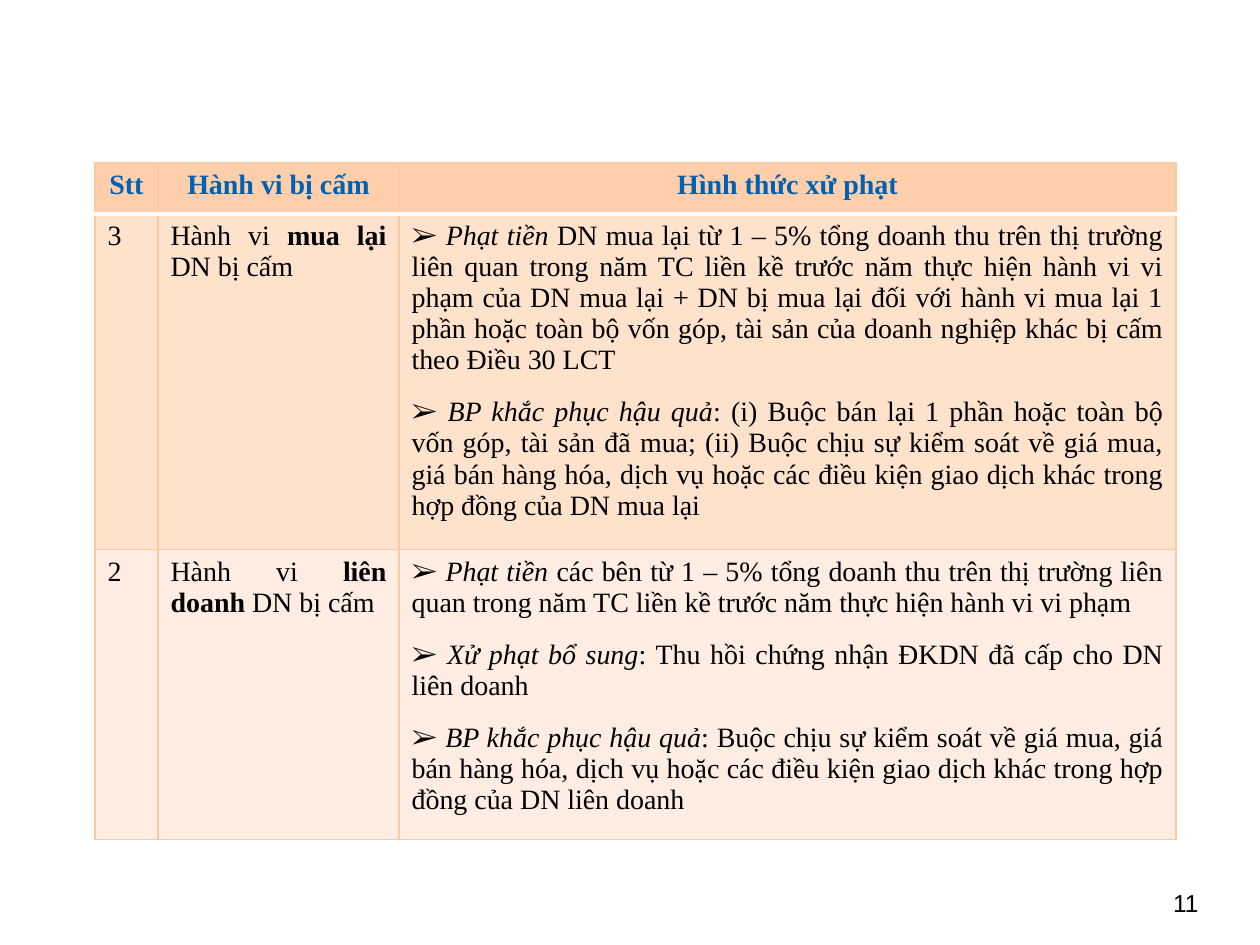
"""Builds a slide with a table of prohibited acts and their penalties."""
from dataclasses import dataclass

from lxml import etree
from pptx import Presentation
from pptx.dml.color import RGBColor
from pptx.enum import text
from pptx.oxml import ns
from pptx.util import Emu, Pt

EMU_PER_PX = 914400 / 126
SERIF = "Times New Roman"
BLACK, BLUE, WHITE, PEACH = "000000", "0061B2", "FFFFFF", "FACAA4"
ALIGN = text.PP_ALIGN
COLUMNS = [63, 241, 777]


@dataclass(frozen=True)
class Span:
    words: str
    bold: bool = False
    italic: bool = False
    color: str = BLACK


@dataclass(frozen=True)
class Para:
    spans: list[Span]
    align: ALIGN = ALIGN.JUSTIFY
    bulleted: bool = False


@dataclass(frozen=True)
class Row:
    height: int
    fill: str
    top: tuple[str, float]
    bottom: tuple[str, float]
    cells: list[list[Para]]


def px(length: int) -> Emu:
    return Emu(round(length * EMU_PER_PX))


def rgb(value: str) -> RGBColor:
    return RGBColor.from_string(value)


def heading(words: str) -> list[Para]:
    return [Para([Span(words, bold=True, color=BLUE)], ALIGN.CENTER)]


def act(kind: str) -> list[Para]:
    return [Para([Span("Hành vi "), Span(kind, bold=True), Span("DN bị cấm")])]


def penalty(name: str, detail: str) -> Para:
    return Para([Span(" "), Span(name, italic=True), Span(detail)], bulleted=True)


def write_span(paragraph, span: Span, size: int, family: str) -> None:
    run = paragraph.add_run()
    run.text = span.words
    run.font.name, run.font.size = family, Pt(size)
    run.font.bold, run.font.italic = span.bold, span.italic
    run.font.color.rgb = rgb(span.color)


def write_paras(frame, paras: list[Para], size: int = 16, family: str = SERIF) -> None:
    for index, para in enumerate(paras):
        paragraph = frame.add_paragraph() if index else frame.paragraphs[0]
        paragraph.alignment = para.align
        if para.bulleted:
            paragraph.space_after = Pt(12)
            properties = paragraph._p.get_or_add_pPr()
            etree.SubElement(properties, ns.qn("a:buFont"), typeface=SERIF)
            etree.SubElement(properties, ns.qn("a:buChar"), char="➢")
        for span in para.spans:
            write_span(paragraph, span, size, family)


def draw_border(cell, side: str, color: str, width: float) -> None:
    line = etree.SubElement(cell._tc.get_or_add_tcPr(), ns.qn(f"a:ln{side}"), w=str(int(Pt(width))))
    fill = etree.SubElement(line, ns.qn("a:solidFill"))
    etree.SubElement(fill, ns.qn("a:srgbClr"), val=color)


def draw_cell(cell, row: Row, paras: list[Para]) -> None:
    thin = (PEACH, 0.75)
    for side, border in zip("LRTB", (thin, thin, row.top, row.bottom)):
        draw_border(cell, side, *border)
    cell.fill.solid()
    cell.fill.fore_color.rgb = rgb(row.fill)
    write_paras(cell.text_frame, paras)


def draw_table(slide, left: int, top: int, rows: list[Row]) -> None:
    height = sum(row.height for row in rows)
    frame = slide.shapes.add_table(
        len(rows), len(COLUMNS), px(left), px(top), px(sum(COLUMNS)), px(height))
    table = frame.table
    table.horz_banding = False
    for column, width in zip(table.columns, COLUMNS):
        column.width = px(width)
    for row_index, row in enumerate(rows):
        table.rows[row_index].height = px(row.height)
        for column_index, paras in enumerate(row.cells):
            draw_cell(table.cell(row_index, column_index), row, paras)


def draw_page_number(slide, number: str) -> None:
    box = slide.shapes.add_textbox(px(1142), px(882), px(69), px(42))
    box.text_frame.word_wrap = True
    box.text_frame.vertical_anchor = text.MSO_ANCHOR.MIDDLE
    write_paras(box.text_frame, [Para([Span(number)], ALIGN.RIGHT)], 14, "Arial")


def penalty_rows() -> list[Row]:
    thin, thick = (PEACH, 0.75), (WHITE, 2)
    takeover = [
        penalty("Phạt tiền ", "DN mua lại từ 1 – 5% tổng doanh thu trên thị trường liên quan "
                "trong năm TC liền kề trước năm thực hiện hành vi vi phạm của DN mua lại + DN bị "
                "mua lại đối với hành vi mua lại 1 phần hoặc toàn bộ vốn góp, tài sản của doanh "
                "nghiệp khác bị cấm theo Điều 30 LCT"),
        penalty("BP khắc phục hậu quả", ": (i) Buộc bán lại 1 phần hoặc toàn bộ vốn góp, tài sản "
                "đã mua; (ii) Buộc chịu sự kiểm soát về giá mua, giá bán hàng hóa, dịch vụ hoặc "
                "các điều kiện giao dịch khác trong hợp đồng của DN mua lại"),
    ]
    joint_venture = [
        penalty("Phạt tiền ", "các bên từ 1 – 5% tổng doanh thu trên thị trường liên quan trong "
                "năm TC liền kề trước năm thực hiện hành vi vi phạm"),
        penalty("Xử phạt bổ sung", ": Thu hồi chứng nhận ĐKDN đã cấp cho DN liên doanh"),
        penalty("BP khắc phục hậu quả", ": Buộc chịu sự kiểm soát về giá mua, giá bán hàng hóa, "
                "dịch vụ hoặc các điều kiện giao dịch khác trong hợp đồng của DN liên doanh"),
    ]
    titles = [heading(words) for words in ("Stt", "Hành vi bị cấm", "Hình thức xử phạt")]
    return [
        Row(51, "FECFAA", thin, thick, titles),
        Row(313, "FFE2CC", thick, thin, [[Para([Span("3")])], act("mua lại "), takeover]),
        Row(273, "FFEDE3", thin, thin, [[Para([Span("2")])], act("liên doanh "), joint_venture]),
    ]


def main() -> None:
    deck = Presentation()
    deck.slide_width, deck.slide_height = px(1260), px(945)
    slide = deck.slides.add_slide(deck.slide_layouts[6])
    draw_page_number(slide, "11")
    draw_table(slide, 95, 163, penalty_rows())
    deck.save("out.pptx")


if __name__ == "__main__":
    main()
